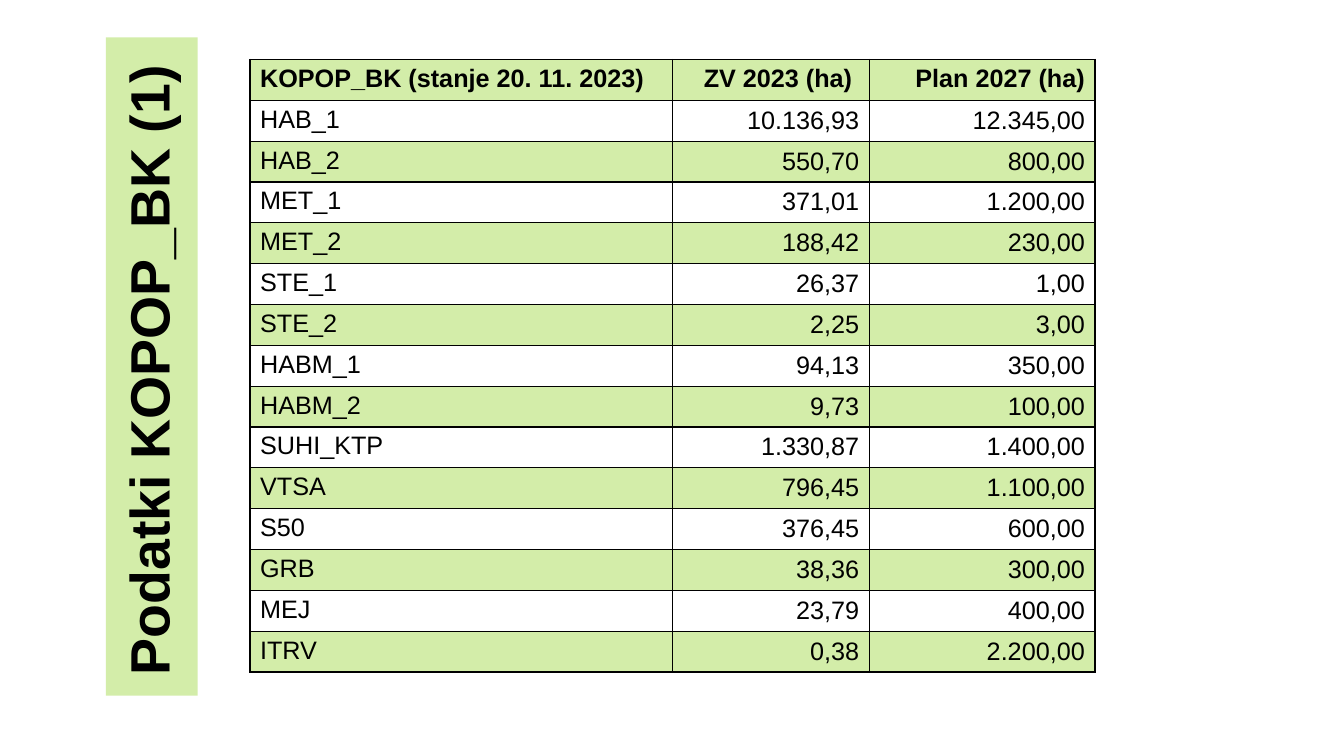
from lxml.etree import SubElement
from pptx import Presentation
from pptx.dml.color import RGBColor
from pptx.enum.shapes import MSO_SHAPE
from pptx.enum.text import MSO_ANCHOR, PP_ALIGN
from pptx.oxml.ns import qn
from pptx.util import Inches, Pt

COLORS = {"green": "D3EDA9", "white": "FFFFFF", "black": "000000"}
FONT = "Arial"
HEADER = ("KOPOP_BK (stanje 20. 11. 2023)", " ZV 2023 (ha) ", "Plan 2027 (ha)")
AREAS = [
    ("HAB_1", "10.136,93", "12.345,00"),
    ("HAB_2", "550,70", "800,00"),
    ("MET_1", "371,01", "1.200,00"),
    ("MET_2", "188,42", "230,00"),
    ("STE_1", "26,37", "1,00"),
    ("STE_2", "2,25", "3,00"),
    ("HABM_1", "94,13", "350,00"),
    ("HABM_2", "9,73", "100,00"),
    ("SUHI_KTP", "1.330,87", "1.400,00"),
    ("VTSA", "796,45", "1.100,00"),
    ("S50", "376,45", "600,00"),
    ("GRB", "38,36", "300,00"),
    ("MEJ", "23,79", "400,00"),
    ("ITRV", "0,38", "2.200,00"),
]
COLUMN_SHARES = (0.5, 0.233, 0.267)


def paint(target, color):
    """Give a shape or cell a solid fill."""
    target.fill.solid()
    target.fill.fore_color.rgb = RGBColor.from_string(COLORS[color])


def add_span(para, text, size, bold):
    """Add one run of black text."""
    span = para.add_run()
    span.text = text
    span.font.name = FONT
    span.font.size = Pt(size)
    span.font.bold = bold
    span.font.color.rgb = RGBColor.from_string(COLORS["black"])


def set_borders(cell):
    """Draw a thin black line on all four sides of a cell."""
    properties = cell._tc.get_or_add_tcPr()
    for position, side in enumerate(("a:lnL", "a:lnR", "a:lnT", "a:lnB")):
        line = SubElement(properties, qn(side), w=str(Pt(1)))
        fill = SubElement(line, qn("a:solidFill"))
        SubElement(fill, qn("a:srgbClr"), val=COLORS["black"])
        properties.insert(position, line)


def add_side_title(page, text, left, top, width, height):
    """Fill a tall box with a title that reads upwards."""
    box = page.shapes.add_shape(
        MSO_SHAPE.RECTANGLE,
        Inches(left + (width - height) / 2), Inches(top + (height - width) / 2),
        Inches(height), Inches(width),
    )
    box.rotation = 270
    box.shadow.inherit = False
    paint(box, "green")
    box.line.fill.background()
    frame = box.text_frame
    frame.word_wrap = True
    frame.vertical_anchor = MSO_ANCHOR.MIDDLE
    frame.margin_left = Inches(0.2)
    para = frame.paragraphs[0]
    para.alignment = PP_ALIGN.LEFT
    para.line_spacing = 0.9
    add_span(para, text, 39.6, True)


def add_area_table(page, left, top, width, height):
    """Fill a box with the banded table of areas."""
    rows = [HEADER, *AREAS]
    table = page.shapes.add_table(
        len(rows), len(HEADER),
        Inches(left), Inches(top), Inches(width), Inches(height),
    ).table
    for column, share in zip(table.columns, COLUMN_SHARES):
        column.width = Inches(width * share)
    for row_index, values in enumerate(rows):
        for column_index, text in enumerate(values):
            cell = table.cell(row_index, column_index)
            paint(cell, "white" if row_index % 2 else "green")
            set_borders(cell)
            para = cell.text_frame.paragraphs[0]
            if column_index:
                para.alignment = PP_ALIGN.RIGHT
                if row_index:
                    cell.margin_top = Inches(0.06)
                    cell.margin_bottom = Inches(0.01)
            add_span(para, text, 18, row_index == 0)


def main():
    """Build the slide and save the deck."""
    deck = Presentation()
    deck.slide_width, deck.slide_height = Inches(13.33), Inches(7.5)
    page = deck.slides.add_slide(deck.slide_layouts[6])
    add_area_table(page, 2.48, 0.59, 8.38, 6.08)
    add_side_title(page, "Podatki KOPOP_BK (1)", 1.05, 0.37, 0.91, 6.53)
    deck.save("out.pptx")


if __name__ == "__main__":
    main()
